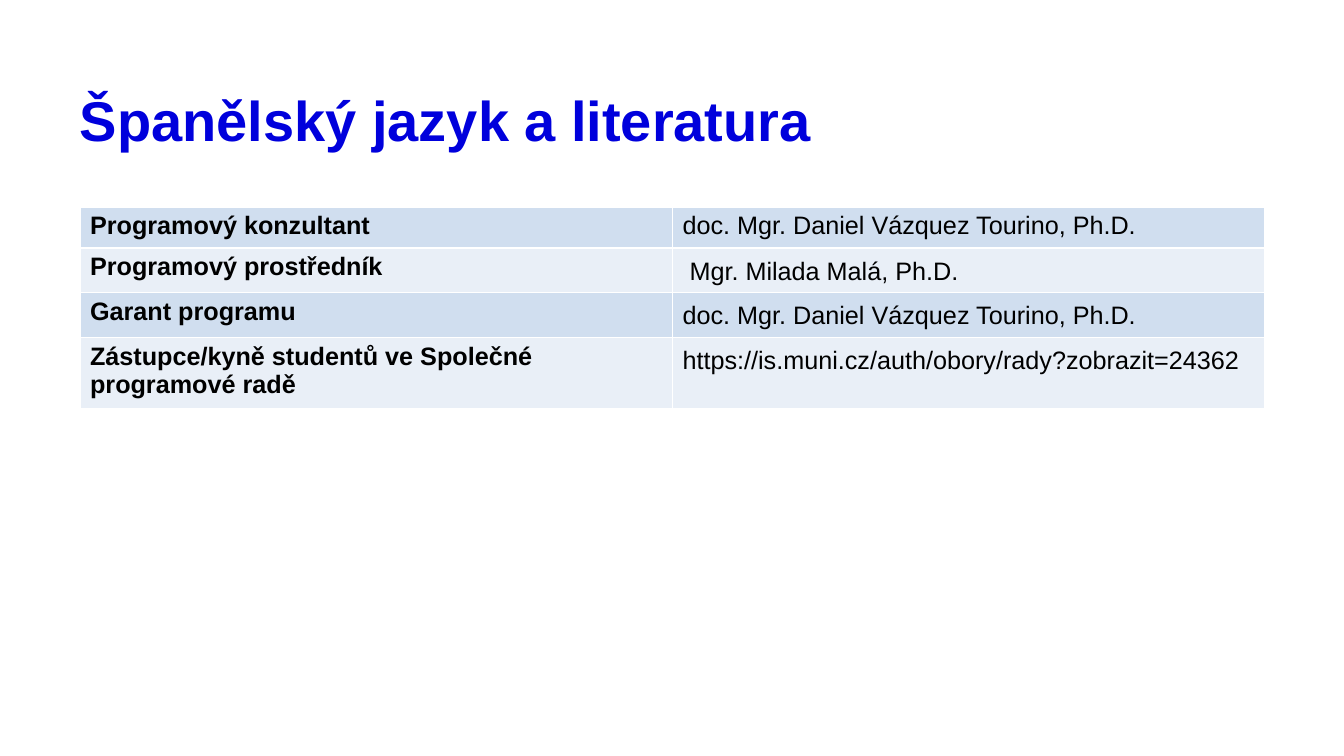
from lxml import etree
from pptx import Presentation
from pptx import util as u
from pptx.dml.color import RGBColor
from pptx.enum import text
from pptx.oxml import ns

COLORS = {
    "title": "0000DC",
    "text": "000000",
    "dark_band": "D0DEEF",
    "light_band": "E9EFF7",
    "border": "FFFFFF",
}
PEOPLE = [
    ("Programový konzultant", "doc. Mgr. Daniel Vázquez Tourino, Ph.D."),
    ("Programový prostředník", " Mgr. Milada Malá, Ph.D."),
    ("Garant programu", "doc. Mgr. Daniel Vázquez Tourino, Ph.D."),
    (
        "Zástupce/kyně studentů ve Společné programové radě",
        "https://is.muni.cz/auth/obory/rady?zobrazit=24362",
    ),
]
ROW_HEIGHTS = [41, 42, 43, 66]


def px(n):
    return u.Emu(round(n * 914400 / 100.8))


class Deck:
    font = "Arial"

    def __init__(self, width, height):
        self.prs = Presentation()
        self.prs.slide_width, self.prs.slide_height = px(width), px(height)
        self.s = self.prs.slides.add_slide(self.prs.slide_layouts[6])

    def run(self, p, words, size, color, bold):
        r = p.add_run()
        r.text = words
        r.font.name = self.font
        r.font.size = u.Pt(size)
        r.font.bold = bold
        r.font.color.rgb = RGBColor.from_string(COLORS[color])

    def title(self, words, x, y, w, h):
        sp = self.s.shapes.add_textbox(px(x), px(y), px(w), px(h))
        tf = sp.text_frame
        tf.word_wrap = True
        tf.vertical_anchor = text.MSO_ANCHOR.TOP
        tf.margin_left = tf.margin_right = tf.margin_top = tf.margin_bottom = 0
        self.run(tf.paragraphs[0], words, 40, "title", True)

    def borders(self, cell):
        tc_pr = cell._tc.get_or_add_tcPr()
        for i, side in enumerate(("lnL", "lnR", "lnT", "lnB")):
            ln = etree.Element(ns.qn(f"a:{side}"), w=str(u.Pt(1)))
            fill = etree.SubElement(ln, ns.qn("a:solidFill"))
            etree.SubElement(fill, ns.qn("a:srgbClr"), val=COLORS["border"])
            tc_pr.insert(i, ln)

    def table(self, rows, heights, x, y, w):
        cols = len(rows[0])
        frame = self.s.shapes.add_table(
            len(rows), cols, px(x), px(y), px(w), px(sum(heights))
        )
        table = frame.table
        for i, (row, height) in enumerate(zip(rows, heights)):
            table.rows[i].height = px(height)
            band = "light_band" if i % 2 else "dark_band"
            for j, words in enumerate(row):
                cell = table.cell(i, j)
                cell.fill.solid()
                cell.fill.fore_color.rgb = RGBColor.from_string(COLORS[band])
                self.borders(cell)
                p = cell.text_frame.paragraphs[0]
                if i and j:
                    p.line_spacing = 1.15
                self.run(p, words, 18, "text", j == 0)


def main():
    deck = Deck(1344, 756)
    deck.title("Španělský jazyk a literatura", 80, 85, 1185, 64)
    deck.table(PEOPLE, ROW_HEIGHTS, 80, 207, 1185)
    deck.prs.save("out.pptx")


if __name__ == "__main__":
    main()
